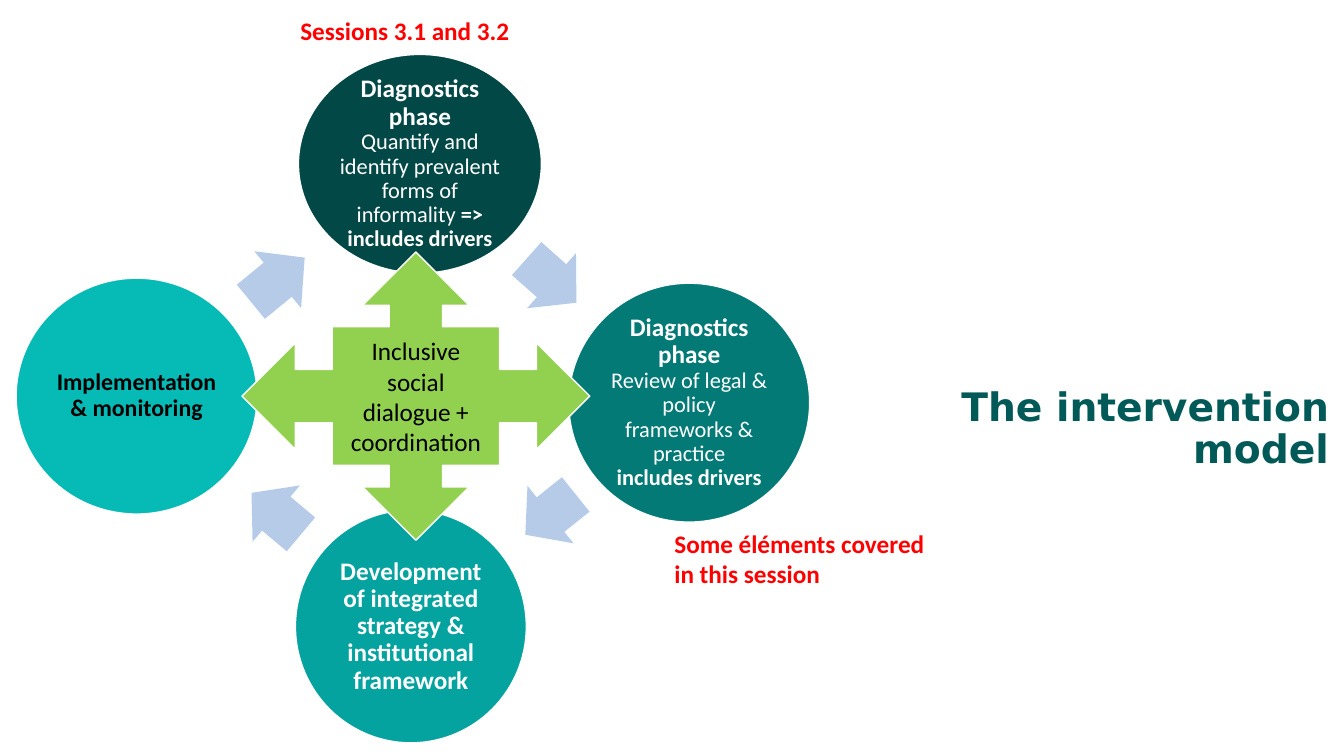
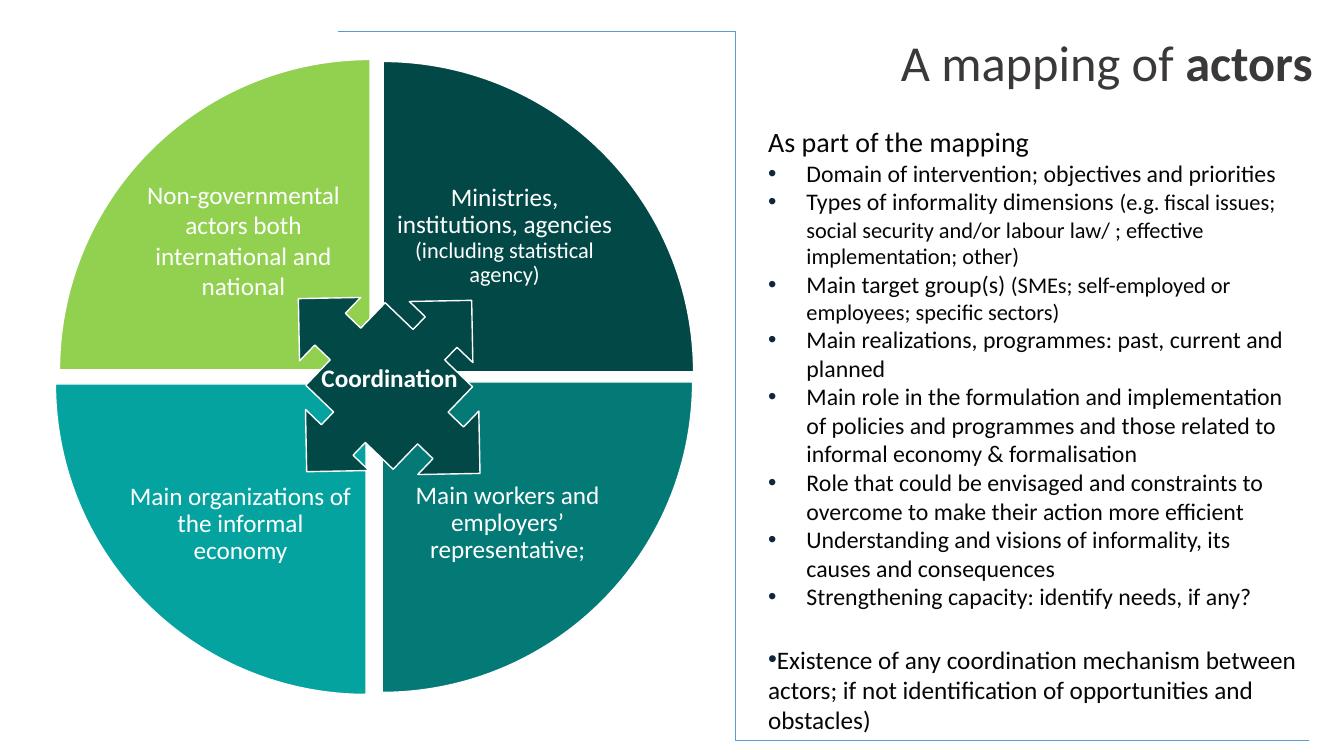
from lxml import etree
from pptx import Presentation
from pptx.dml.color import RGBColor
from pptx.enum.shapes import MSO_CONNECTOR, MSO_SHAPE
from pptx.enum.text import MSO_ANCHOR, MSO_AUTO_SIZE, PP_ALIGN
from pptx.oxml.ns import qn
from pptx.util import Inches, Pt

FONT = "Calibri"
WHITE, BLACK, RED = "FFFFFF", "000000", "FF0000"
INK, BULLET = "060606", "0F273D"
DARK, TEAL, SEA, AQUA, LIME = "024846", "047A77", "05A39F", "06BAB6", "92D050"
PALE_BLUE, LINE_BLUE = "B5CBE7", "5B9BD5"
BREAK = None


def rgb(value):
    return RGBColor.from_string(value)


def box(values):
    return [Inches(v) for v in values]


def setup_text(tf, anchor=MSO_ANCHOR.TOP, inset=None):
    tf.word_wrap = True
    tf.auto_size = MSO_AUTO_SIZE.NONE
    tf.vertical_anchor = anchor
    if inset is not None:
        tf.margin_left = tf.margin_right = Inches(inset)
        tf.margin_top = tf.margin_bottom = Inches(inset)


def write(p, runs, colour, align=PP_ALIGN.LEFT, spacing=1.0, font=FONT):
    p.alignment = align
    p.line_spacing = spacing
    for run in runs:
        if run is BREAK:
            p.add_line_break()
            continue
        text, size, bold = run
        r = p.add_run()
        r.text = text
        r.font.name = font
        r.font.size = Pt(size)
        r.font.bold = bold
        r.font.color.rgb = rgb(colour)


def add_bullet(p, indent=0):
    pPr = p._p.get_or_add_pPr()
    pPr.set("marL", str(Inches(indent)))
    pPr.set("indent", str(-Inches(indent)))
    colour = etree.SubElement(pPr, qn("a:buClr"))
    etree.SubElement(colour, qn("a:srgbClr")).set("val", BULLET)
    etree.SubElement(pPr, qn("a:buFont")).set("typeface", "Arial")
    etree.SubElement(pPr, qn("a:buChar")).set("char", "•")


def add_title(s, at, runs, colour, font=FONT):
    sp = s.shapes.title
    sp.left, sp.top, sp.width, sp.height = box(at)
    setup_text(sp.text_frame, MSO_ANCHOR.MIDDLE)
    write(sp.text_frame.paragraphs[0], runs, colour, PP_ALIGN.RIGHT, 0.9, font)


def add_shape(s, kind, at, fill, line=WHITE, rotation=0):
    sp = s.shapes.add_shape(kind, *box(at))
    sp.shadow.inherit = False
    sp.rotation = rotation
    sp.fill.solid()
    sp.fill.fore_color.rgb = rgb(fill)
    if line:
        sp.line.color.rgb = rgb(line)
        sp.line.width = Pt(1)
    else:
        sp.line.fill.background()
    return sp


def add_text(s, at, runs, colour, align=PP_ALIGN.LEFT, spacing=1.0,
             anchor=MSO_ANCHOR.TOP, inset=None):
    tf = s.shapes.add_textbox(*box(at)).text_frame
    setup_text(tf, anchor, inset)
    write(tf.paragraphs[0], runs, colour, align, spacing)
    return tf.paragraphs[0]


def add_phase(s, at, fill, runs, colour=WHITE):
    tf = add_shape(s, MSO_SHAPE.OVAL, at, fill).text_frame
    setup_text(tf, MSO_ANCHOR.MIDDLE, 0.03)
    write(tf.paragraphs[0], runs, colour, PP_ALIGN.CENTER, 0.9)


def add_cycle_arrow(s, at, rotation):
    sp = add_shape(s, MSO_SHAPE.RIGHT_ARROW, at, PALE_BLUE, None, rotation)
    sp.adjustments[0], sp.adjustments[1] = 0.6, 0.5


def add_quarter(s, left, top, start, fill):
    sp = add_shape(s, MSO_SHAPE.PIE, (left, top, 6.16, 6.16), fill)
    sp.adjustments[0] = start
    sp.adjustments[1] = (start + 54) % 216


def add_bent_line(s, start, end, bend):
    cxn = s.shapes.add_connector(MSO_CONNECTOR.ELBOW, *box(start + end))
    cxn.line.color.rgb = rgb(LINE_BLUE)
    cxn.line.width = Pt(0.5)
    spPr = cxn._element.spPr
    guide = etree.SubElement(spPr.find(".//" + qn("a:avLst")), qn("a:gd"))
    guide.set("name", "adj1")
    guide.set("fmla", f"val {round(bend * 100000)}")
    etree.SubElement(spPr, qn("a:effectLst"))


def add_bullet_panel(s, at, heading, items):
    sp = add_shape(s, MSO_SHAPE.RECTANGLE, at, WHITE, None)
    tf = sp.text_frame
    setup_text(tf)
    write(tf.paragraphs[0], [(heading, 20, False)], INK)
    for main_text, detail in items:
        p = tf.add_paragraph()
        runs = [(main_text, 17, False)]
        if detail:
            runs.append((detail, 16, False))
        write(p, runs, INK)
        add_bullet(p, 0.38)


def build_model(s):
    add_title(s, (9.08, 3.88, 4.2, 0.77),
              [("The intervention model", 28, True)], "025A58", "DejaVu Sans")
    phases = [
        ((2.96, 0.54, 2.41, 2.17), DARK,
         [("Diagnostics phase", 18, True), BREAK,
          ("Quantify and identify prevalent forms of informality ", 16, False),
          ("=> includes drivers", 16, True)], WHITE),
        ((5.64, 2.81, 2.39, 2.37), TEAL,
         [("Diagnostics phase", 18, True), BREAK,
          ("Review of legal & policy frameworks & practice", 16, False), BREAK,
          ("includes drivers", 16, True)], WHITE),
        ((2.93, 5.06, 2.29, 2.31), SEA,
         [("Development of integrated strategy & institutional framework",
           18, True)], WHITE),
        ((0.16, 2.76, 2.39, 2.34), AQUA,
         [("Implementation & monitoring", 17, True)], BLACK),
    ]
    for phase in phases:
        add_phase(s, *phase)
    arrows = [
        ((5.14, 2.42, 0.66, 0.73), 41.6),
        ((5.14, 4.74, 0.64, 0.73), 141.3),
        ((2.42, 4.73, 0.64, 0.73), 220),
        ((2.41, 2.41, 0.69, 0.73), 320.6),
    ]
    for arrow in arrows:
        add_cycle_arrow(s, *arrow)
    hub = add_shape(s, MSO_SHAPE.QUAD_ARROW_CALLOUT, (2.4, 2.5, 3.45, 2.86), LIME)
    setup_text(hub.text_frame, MSO_ANCHOR.MIDDLE)
    write(hub.text_frame.paragraphs[0],
          [("Inclusive social dialogue + coordination", 18, False)],
          BLACK, PP_ALIGN.CENTER)
    for at, text in [
        ((2.88, 0.1, 2.48, 0.4), "Sessions 3.1 and 3.2"),
        ((6.59, 5.19, 2.89, 0.71), "Some éléments covered in this session"),
    ]:
        add_text(s, at, [(text, 18, True)], RED)


def build_mapping(s):
    add_title(s, (3.78, 0.15, 9.34, 0.99),
              [("A mapping of ", 36, False), ("actors", 36, True)], "3B3838")
    add_bullet_panel(s, (7.52, 1.19, 5.41, 5.11), "As part of the mapping", [
        ("Domain of intervention; objectives and priorities", ""),
        ("Types of informality dimensions ",
         "(e.g. fiscal issues; social security and/or labour law/ ; "
         "effective implementation; other)"),
        ("Main target group(s) ",
         "(SMEs; self-employed or employees; specific sectors)"),
        ("Main realizations, programmes: past, current and planned", ""),
        ("Main role in the formulation and implementation of policies and "
         "programmes and those related to informal economy & formalisation", ""),
        ("Role that could be envisaged and constraints to overcome to make "
         "their action more efficient", ""),
        ("Understanding and visions of informality, its causes and "
         "consequences", ""),
        ("Strengthening capacity: identify needs, if any?", ""),
    ])
    quarters = [
        (0.72, 0.61, 162, DARK, (3.87, 1.74), 0.9,
         [("Ministries, institutions, agencies ", 18, False),
          ("(including statistical agency)", 16, False)]),
        (0.71, 0.71, 0, TEAL, (3.9, 4.59), 0.9,
         [("Main workers and employers’ representative;", 18, False)]),
        (0.55, 0.73, 54, SEA, (1.25, 4.6), 0.9,
         [("Main organizations of the informal economy", 18, False)]),
        (0.59, 0.59, 108, LIME, (1.28, 1.78), 1.0,
         [("Non-governmental actors both international and national",
           18, False)]),
    ]
    for left, top, start, fill, label_at, spacing, runs in quarters:
        add_quarter(s, left, top, start, fill)
        add_text(s, label_at + (2.27, 1.2), runs, WHITE, PP_ALIGN.CENTER,
                 spacing, MSO_ANCHOR.MIDDLE, 0.03)
    add_shape(s, MSO_SHAPE.QUAD_ARROW_CALLOUT, (2.61, 2.65, 2.5, 2.36), DARK,
              rotation=43.9)
    add_text(s, (3.03, 3.55, 1.67, 0.4), [("Coordination", 18, True)], WHITE,
             PP_ALIGN.CENTER)
    add_bent_line(s, (3.35, 0.31), (12.98, 7.35), 0.41)
    p = add_text(s, (7.52, 6.34, 5.6, 1.01),
                 [("Existence of any coordination mechanism between actors; if "
                   "not identification of opportunities and obstacles)",
                   18, False)], INK)
    add_bullet(p)


def main():
    prs = Presentation()
    prs.slide_width, prs.slide_height = Inches(13.33), Inches(7.5)
    for build in (build_model, build_mapping):
        build(prs.slides.add_slide(prs.slide_layouts[5]))
    prs.save("out.pptx")


if __name__ == "__main__":
    main()
